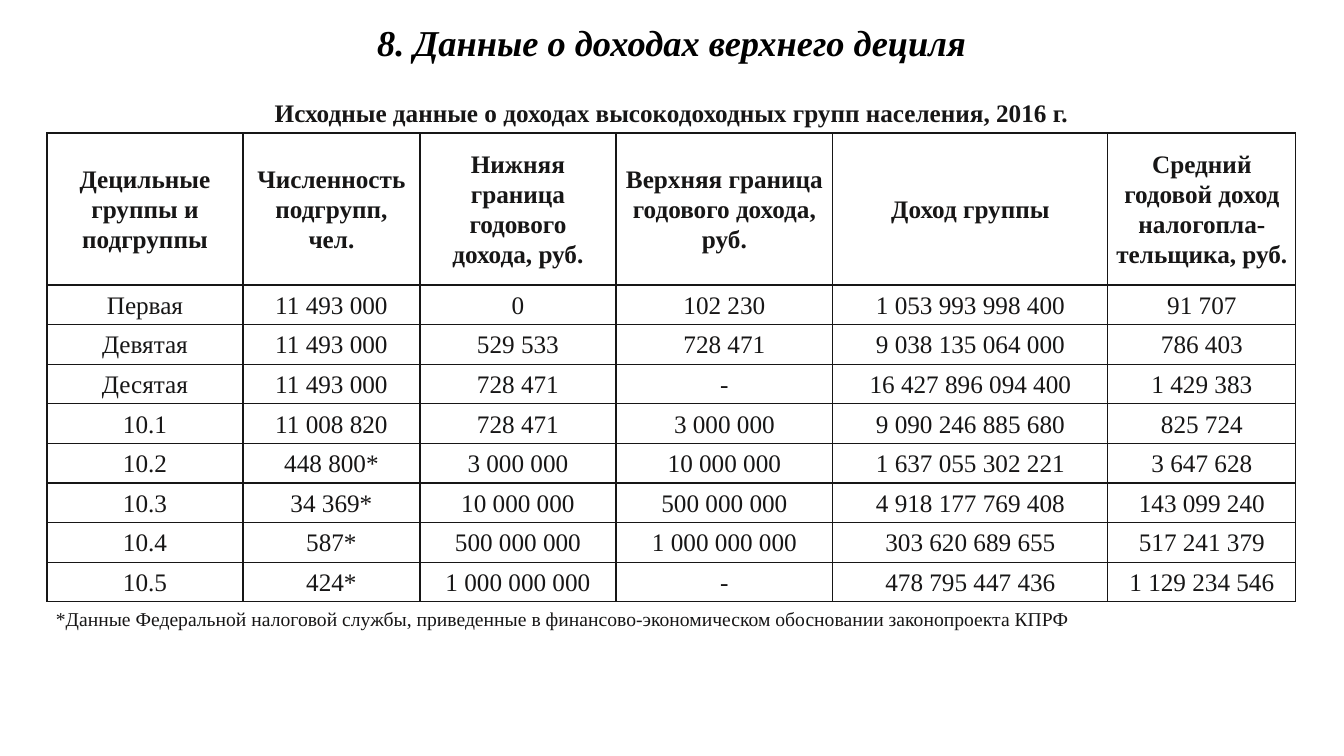
from lxml.etree import SubElement
from pptx import Presentation
from pptx.dml.color import RGBColor
from pptx.enum.text import MSO_ANCHOR as Anchor, MSO_AUTO_SIZE as Fit, PP_ALIGN as Align
from pptx.oxml.ns import qn
from pptx.util import Pt

TITLE = "8. Данные о доходах верхнего дециля"
CAPTION = "Исходные данные о доходах высокодоходных групп населения, 2016 г."
NOTE = ("*Данные Федеральной налоговой службы, приведенные в "
        "финансово-экономическом обосновании законопроекта КПРФ")
ROWS = [
    ("Децильные группы и подгруппы", "Численность подгрупп, чел.",
     "Нижняя граница годового дохода, руб.", "Верхняя граница годового дохода, руб.",
     "Доход группы", "Средний годовой доход налогопла-тельщика, руб."),
    ("Первая", "11 493 000", "0", "102 230", "1 053 993 998 400", "91 707"),
    ("Девятая", "11 493 000", "529 533", "728 471", "9 038 135 064 000", "786 403"),
    ("Десятая", "11 493 000", "728 471", "-", "16 427 896 094 400", "1 429 383"),
    ("10.1", "11 008 820", "728 471", "3 000 000", "9 090 246 885 680", "825 724"),
    ("10.2", "448 800*", "3 000 000", "10 000 000", "1 637 055 302 221", "3 647 628"),
    ("10.3", "34 369*", "10 000 000", "500 000 000", "4 918 177 769 408", "143 099 240"),
    ("10.4", "587*", "500 000 000", "1 000 000 000", "303 620 689 655", "517 241 379"),
    ("10.5", "424*", "1 000 000 000", "-", "478 795 447 436", "1 129 234 546"),
]
WIDTHS = [196, 177, 196, 217, 275, 188]
LEFT, TOP, HEAD, BODY = 47, 133, 152, 317
BLACK = RGBColor(0x00, 0x00, 0x00)
INK = RGBColor(0x17, 0x16, 0x16)
FONT = "Times New Roman"


def px(n):
    return round(n * 914400 / 100.8)


def write(frame, text, size, color=INK, bold=False, italic=False, align=Align.CENTER):
    para = frame.paragraphs[0]
    para.alignment = align
    run = para.add_run()
    run.text = text
    font = run.font
    font.name, font.size, font.bold, font.italic = FONT, Pt(size), bold, italic
    font.color.rgb = color
    return para


def place(shape, x, y, w, h, wrap=True):
    shape.left, shape.top, shape.width, shape.height = map(px, (x, y, w, h))
    frame = shape.text_frame
    frame.word_wrap = wrap
    frame.auto_size = Fit.NONE
    frame.vertical_anchor = Anchor.TOP
    return frame


def border(cell):
    props = cell._tc.get_or_add_tcPr()
    for i, side in enumerate(("lnL", "lnR", "lnT", "lnB")):
        line = props.makeelement(qn("a:" + side), {"w": str(Pt(1))})
        fill = SubElement(line, qn("a:solidFill"))
        SubElement(fill, qn("a:srgbClr"), val=str(INK))
        props.insert(i, line)


def fill_cell(cell, text, bold):
    cell.fill.background()
    cell.vertical_anchor = Anchor.MIDDLE
    cell.margin_left = cell.margin_right = px(7)
    cell.margin_top = cell.margin_bottom = 0
    write(cell.text_frame, text, 18, bold=bold).line_spacing = 1.07
    border(cell)


def main():
    deck = Presentation()
    deck.slide_width, deck.slide_height = px(1344), px(756)
    slide = deck.slides.add_slide(deck.slide_layouts[5])
    shapes = slide.shapes
    write(place(shapes.title, 0, 15, 1344, 54), TITLE, 26, BLACK, True, True)
    span = sum(WIDTHS)
    box = shapes.add_textbox(0, 0, 0, 0)
    write(place(box, LEFT, 92, span, 40), CAPTION, 18, bold=True)

    area = map(px, (LEFT, TOP, span, HEAD + BODY))
    table = shapes.add_table(len(ROWS), len(WIDTHS), *area).table
    table.first_row = table.horz_banding = False
    for col, width in zip(table.columns, WIDTHS):
        col.width = px(width)
    for r, (row, texts) in enumerate(zip(table.rows, ROWS)):
        row.height = px(BODY / (len(ROWS) - 1) if r else HEAD)
        for cell, text in zip(row.cells, texts):
            fill_cell(cell, text, r == 0)

    box = shapes.add_textbox(0, 0, 0, 0)
    write(place(box, 46, 602, 1041, 34, False), NOTE, 14, align=Align.LEFT)
    deck.save("out.pptx")


if __name__ == "__main__":
    main()
